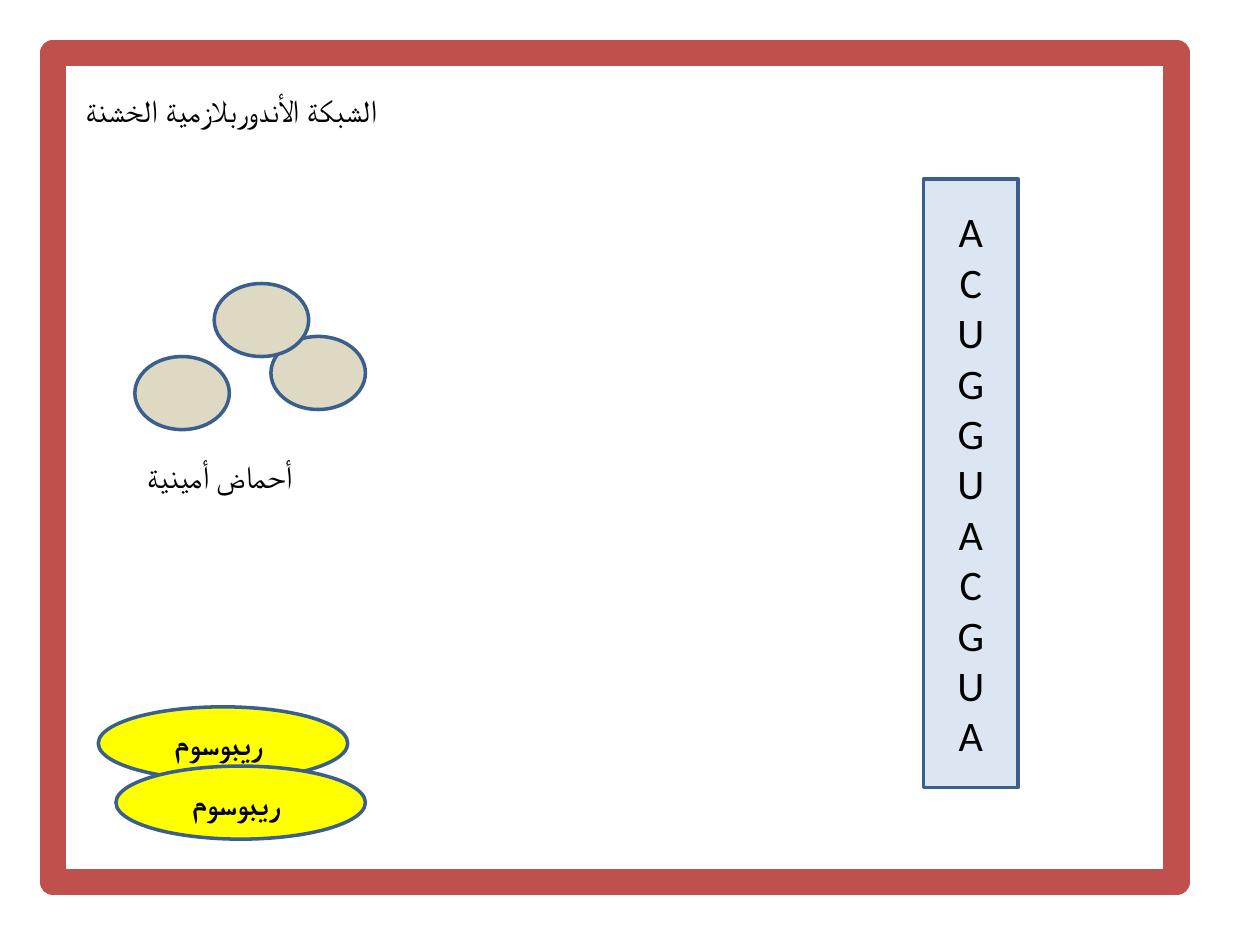
from pptx import Presentation
from pptx.dml.color import RGBColor
from pptx.enum.shapes import MSO_SHAPE as Shape
from pptx.enum.text import MSO_ANCHOR as Anchor, MSO_AUTO_SIZE as AutoSize, PP_ALIGN as Align
from pptx.util import Inches, Pt

BLACK = RGBColor(0x00, 0x00, 0x00)
RED = RGBColor(0xC0, 0x50, 0x4D)
BLUE = RGBColor(0x3A, 0x5F, 0x8C)
PALE_BLUE = RGBColor(0xDC, 0xE6, 0xF2)
YELLOW = RGBColor(0xFF, 0xFF, 0x00)
TAN = RGBColor(0xDD, 0xD9, 0xC3)

RNA_BASES = "ACUGGUACGUA"
RIBOSOMES = [(0.78, 5.61), (0.92, 6.08)]
AMINO_ACIDS = [(1.07, 2.83), (2.15, 2.67), (1.7, 2.25)]


def write_text(sp, lines, size=18, bold=False, align=Align.LEFT, anchor=Anchor.TOP):
    tf = sp.text_frame
    tf.word_wrap = True
    tf.auto_size = AutoSize.NONE
    tf.vertical_anchor = anchor
    for i, line in enumerate(lines):
        p = tf.add_paragraph() if i else tf.paragraphs[0]
        p.alignment = align
        r = p.add_run()
        r.text = line
        r.font.name = "Calibri"
        r.font.size = Pt(size)
        r.font.bold = bold
        r.font.color.rgb = BLACK


def add_outlined(s, kind, x, y, w, h, fill=None, line=BLUE, weight=2):
    sp = s.shapes.add_shape(kind, Inches(x), Inches(y), Inches(w), Inches(h))
    sp.shadow.inherit = False
    if fill is None:
        sp.fill.background()
    else:
        sp.fill.solid()
        sp.fill.fore_color.rgb = fill
    sp.line.color.rgb = line
    sp.line.width = Pt(weight)
    return sp


def add_title(s, text, x, y, w, h):
    sp = s.shapes.title
    sp.left, sp.top, sp.width, sp.height = Inches(x), Inches(y), Inches(w), Inches(h)
    write_text(sp, [text])


def add_label(s, text, x, y, w, h):
    sp = s.shapes.add_textbox(Inches(x), Inches(y), Inches(w), Inches(h))
    write_text(sp, [text])


def main():
    prs = Presentation()
    prs.slide_width, prs.slide_height = Inches(10), Inches(7.5)
    s = prs.slides.add_slide(prs.slide_layouts[5])

    add_outlined(s, Shape.RECTANGLE, 0.42, 0.42, 8.92, 6.58, line=RED, weight=15.25)
    add_title(s, "الشبكة الأندوربلازمية الخشنة", 0.58, 0.67, 4.29, 0.4)

    strand = add_outlined(s, Shape.RECTANGLE, 7.33, 1.42, 0.75, 4.83, fill=PALE_BLUE)
    write_text(strand, RNA_BASES, size=24, align=Align.CENTER, anchor=Anchor.MIDDLE)

    for x, y in RIBOSOMES:
        ribosome = add_outlined(s, Shape.OVAL, x, y, 1.98, 0.58, fill=YELLOW)
        write_text(ribosome, ["ريبوسوم "], bold=True, align=Align.CENTER, anchor=Anchor.MIDDLE)

    for x, y in AMINO_ACIDS:
        add_outlined(s, Shape.OVAL, x, y, 0.75, 0.58, fill=TAN)
    add_label(s, "أحماض أمينية", 1.07, 3.58, 1.45, 0.4)

    prs.save("out.pptx")


if __name__ == "__main__":
    main()
